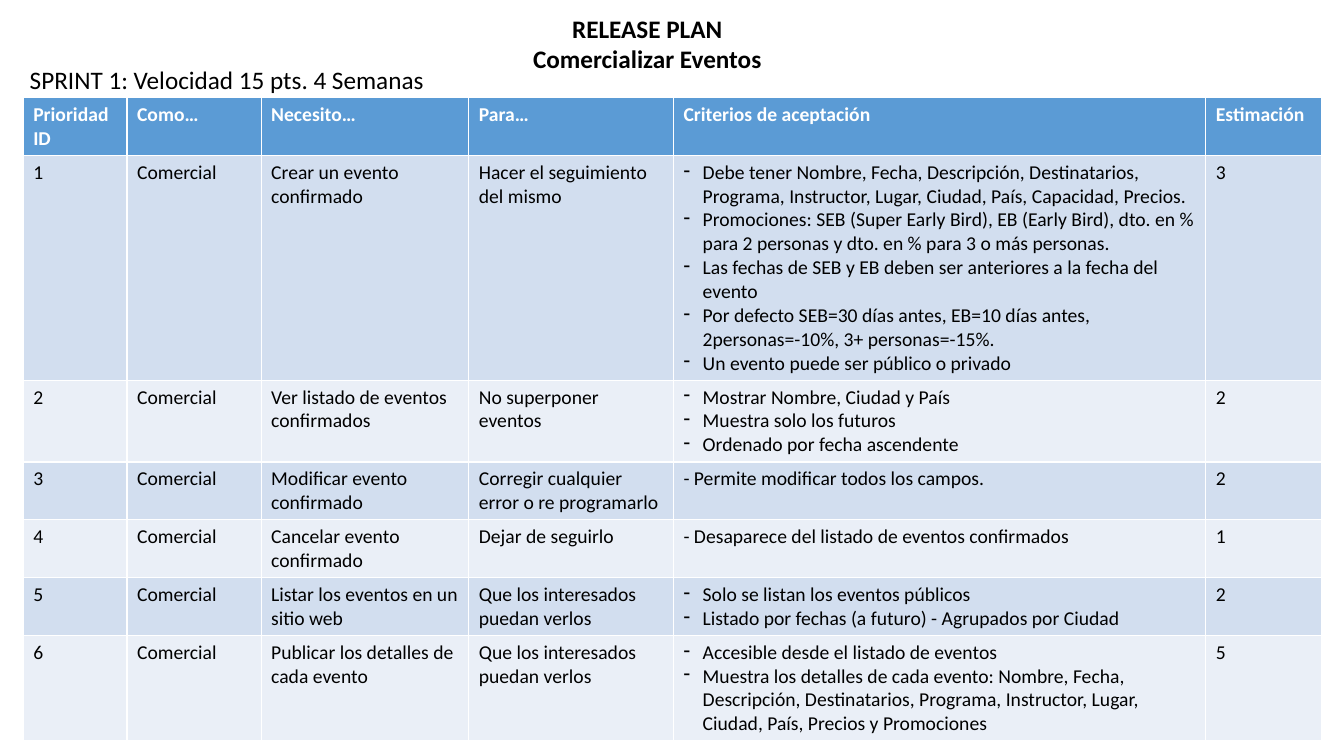
from lxml.etree import SubElement
from pptx import Presentation
from pptx.dml.color import RGBColor
from pptx.enum.text import MSO_AUTO_SIZE, PP_ALIGN
from pptx.oxml.ns import qn
from pptx.util import Inches, Pt

FONT = "Calibri"
BLACK = RGBColor(0x00, 0x00, 0x00)
WHITE = RGBColor(0xFF, 0xFF, 0xFF)
HEADER_BLUE = RGBColor(0x5B, 0x9B, 0xD5)
BAND_DARK = RGBColor(0xD2, 0xDE, 0xEF)
BAND_LIGHT = RGBColor(0xEA, 0xEF, 0xF7)

# Table grid, in inches; row heights follow the number of text lines
COLUMN_WIDTHS = [1.03, 1.33, 2.06, 2.03, 5.28, 1.15]
ROW_LINES = [2, 9, 3, 2, 2, 2, 4]
LINE_HEIGHT = 0.23
CELL_MARGINS = 0.1
BULLET_INDENT = Inches(0.19)

HEADINGS = ["Prioridad ID", "Como…", "Necesito…", "Para…",
            "Criterios de aceptación", "Estimación"]
ROLE = "Comercial"

# Need, purpose, acceptance criteria (a list is bulleted), estimate
STORIES = [
    ("Crear un evento confirmado", "Hacer el seguimiento del mismo",
     ["Debe tener Nombre, Fecha, Descripción, Destinatarios, Programa, "
      "Instructor, Lugar, Ciudad, País, Capacidad, Precios.",
      "Promociones: SEB (Super Early Bird), EB (Early Bird), dto. en % "
      "para 2 personas y dto. en % para 3 o más personas.",
      "Las fechas de SEB y EB deben ser anteriores a la fecha del evento",
      "Por defecto SEB=30 días antes, EB=10 días antes, "
      "2personas=-10%, 3+ personas=-15%.",
      "Un evento puede ser público o privado"], 3),
    ("Ver listado de eventos confirmados", "No superponer eventos",
     ["Mostrar Nombre, Ciudad y País",
      "Muestra solo los futuros",
      "Ordenado por fecha ascendente"], 2),
    ("Modificar evento confirmado", "Corregir cualquier error o re programarlo",
     "- Permite modificar todos los campos.", 2),
    ("Cancelar evento confirmado", "Dejar de seguirlo",
     "- Desaparece del listado de eventos confirmados", 1),
    ("Listar los eventos en un sitio web", "Que los interesados puedan verlos",
     ["Solo se listan los eventos públicos",
      "Listado por fechas (a futuro) - Agrupados por Ciudad"], 2),
    ("Publicar los detalles de cada evento", "Que los interesados puedan verlos",
     ["Accesible desde el listado de eventos",
      "Muestra los detalles de cada evento: Nombre, Fecha, Descripción, "
      "Destinatarios, Programa, Instructor, Lugar, Ciudad, País, "
      "Precios y Promociones"], 5),
]


def format_text(text_frame, size, color, bold):
    for paragraph in text_frame.paragraphs:
        for run in paragraph.runs:
            run.font.name = FONT
            run.font.size = Pt(size)
            run.font.bold = bold
            run.font.color.rgb = color


def add_dash_bullet(paragraph):
    properties = paragraph._p.get_or_add_pPr()
    properties.set("marL", str(BULLET_INDENT))
    properties.set("indent", str(-BULLET_INDENT))
    SubElement(properties, qn("a:buChar")).set("char", "-")


def add_heading(slide, text, left, top, width, height, bold):
    shape = slide.shapes.add_textbox(
        Inches(left), Inches(top), Inches(width), Inches(height))
    text_frame = shape.text_frame
    text_frame.word_wrap = False
    text_frame.auto_size = MSO_AUTO_SIZE.SHAPE_TO_FIT_TEXT
    text_frame.text = text
    for paragraph in text_frame.paragraphs:
        paragraph.alignment = PP_ALIGN.CENTER
    format_text(text_frame, 18, BLACK, bold)


def fill_cell(cell, content, fill, color, bold):
    cell.fill.solid()
    cell.fill.fore_color.rgb = fill
    if isinstance(content, list):
        cell.text_frame.text = "\n".join(content)
        for paragraph in cell.text_frame.paragraphs:
            add_dash_bullet(paragraph)
    else:
        cell.text_frame.text = str(content)
    format_text(cell.text_frame, 14, color, bold)


def add_release_table(slide, left, top):
    heights = [CELL_MARGINS + LINE_HEIGHT * lines for lines in ROW_LINES]
    table = slide.shapes.add_table(
        len(heights), len(COLUMN_WIDTHS), Inches(left), Inches(top),
        Inches(sum(COLUMN_WIDTHS)), Inches(sum(heights))).table
    for column, width in zip(table.columns, COLUMN_WIDTHS):
        column.width = Inches(width)
    for row, height in zip(table.rows, heights):
        row.height = Inches(height)

    # Heading row
    for cell, heading in zip(table.rows[0].cells, HEADINGS):
        fill_cell(cell, heading, HEADER_BLUE, WHITE, True)

    # Banded story rows
    for number, story in enumerate(STORIES, start=1):
        fill = BAND_DARK if number % 2 else BAND_LIGHT
        for cell, content in zip(table.rows[number].cells, (number, ROLE, *story)):
            fill_cell(cell, content, fill, BLACK, False)


def main():
    presentation = Presentation()
    presentation.slide_width = Inches(13.33)
    presentation.slide_height = Inches(7.5)
    slide = presentation.slides.add_slide(presentation.slide_layouts[6])

    add_release_table(slide, 0.23, 0.97)
    add_heading(slide, "RELEASE PLAN\nComercializar Eventos",
                5.18, 0.08, 2.48, 0.71, True)
    add_heading(slide, "SPRINT 1: Velocidad 15 pts. 4 Semanas",
                0.17, 0.59, 4.16, 0.4, False)

    presentation.save("out.pptx")


if __name__ == "__main__":
    main()
